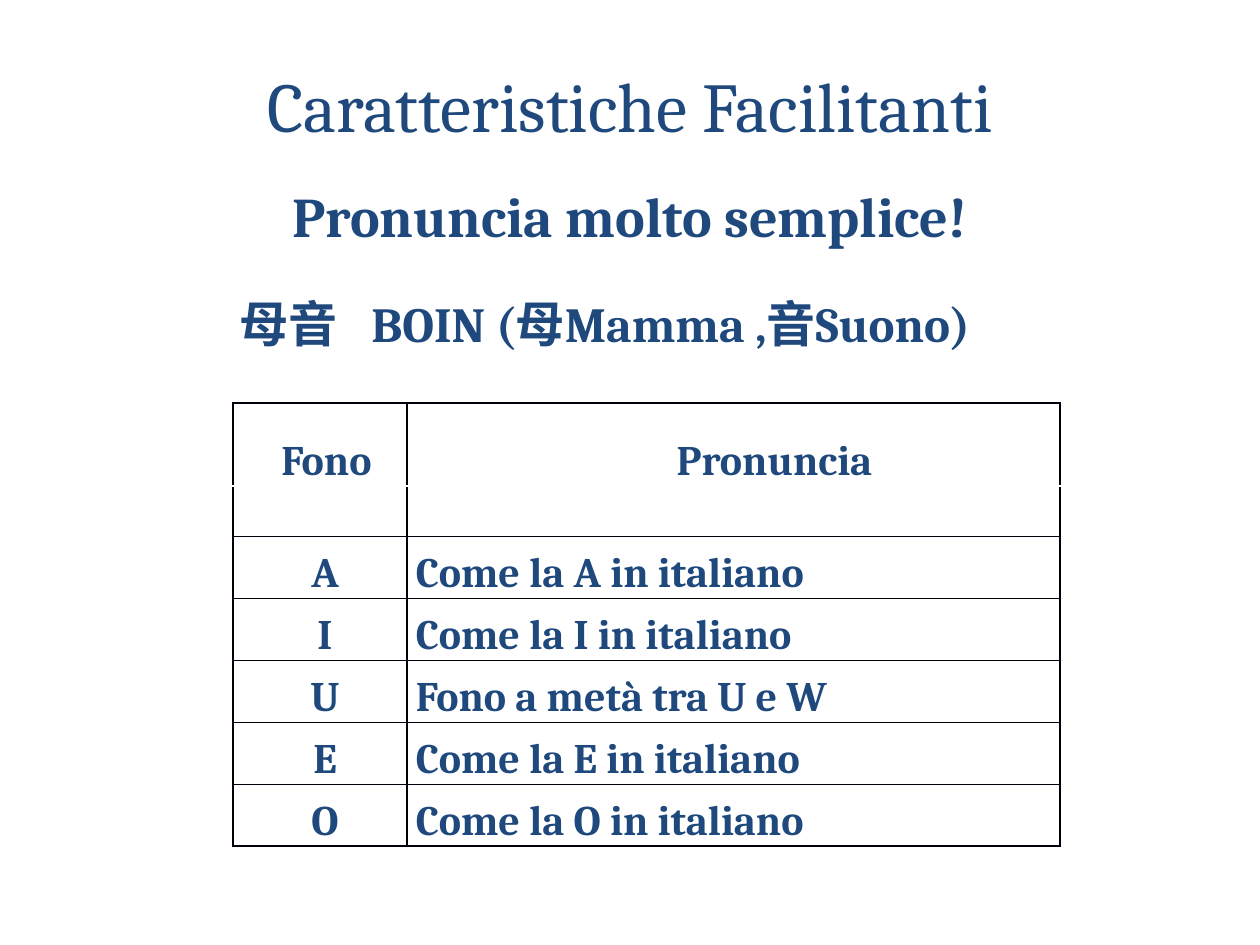
from lxml import etree
from pptx import Presentation
from pptx import util as u
from pptx.dml.color import RGBColor
from pptx.enum import text
from pptx.oxml import ns

PX = 914400 // 126
BLUE, INK = "1F497D", "00000A"
FONT = "Cambria"
LEFT, CENTER = text.PP_ALIGN.LEFT, text.PP_ALIGN.CENTER


def px(length):
    return u.Emu(length * PX)


def color(value):
    return RGBColor.from_string(value)


def add_child(parent, tag, **attributes):
    return etree.SubElement(parent, ns.qn(tag), attributes)


def style(para, size, align=LEFT, bold=True):
    para.alignment = align
    font = para.font
    font.name, font.size, font.bold = FONT, u.Pt(size), bold
    font.color.rgb = color(BLUE)


def add_title(page, box, words):
    title = page.shapes.title
    title.left, title.top, title.width, title.height = map(px, box)
    frame = title.text_frame
    frame.text = words
    frame.auto_size = text.MSO_AUTO_SIZE.NONE
    frame.vertical_anchor = text.MSO_ANCHOR.TOP
    frame.margin_top = px(2)
    style(frame.paragraphs[0], 40, CENTER, False)


def add_line(page, box, words, size, align, tab=None):
    frame = page.shapes.add_textbox(*map(px, box)).text_frame
    frame.word_wrap = True
    para = frame.paragraphs[0]
    para.text = words
    if tab:
        tabs = add_child(para._p.get_or_add_pPr(), "a:tabLst")
        add_child(tabs, "a:tab", pos=str(px(tab)), algn="l")
    style(para, size, align)


def set_borders(cell, sides):
    properties = cell._tc.get_or_add_tcPr()
    for side in sides:
        line = add_child(properties, f"a:ln{side}", w=str(u.Pt(1)))
        fill = add_child(line, "a:solidFill")
        add_child(fill, "a:srgbClr", val=INK)
    cell.fill.background()


def fill_cell(cell, words, align, indent, spacing):
    cell.margin_left = cell.margin_right = cell.margin_top = cell.margin_bottom = 0
    cell.vertical_anchor = text.MSO_ANCHOR.BOTTOM
    para = cell.text_frame.paragraphs[0]
    para.text = words
    para._p.get_or_add_pPr().set("marL", str(px(indent)))
    para.line_spacing = spacing
    para.space_after = u.Pt(10)
    style(para, 24, align)


def add_sounds(page, box, columns, heights, header, sounds):
    table = page.shapes.add_table(len(heights), len(columns), *map(px, box)).table
    table.first_row = table.horz_banding = False
    for column, width in zip(table.columns, columns):
        column.width = px(width)
    for row, height in zip(table.rows, heights):
        row.height = px(height)

    # The header spans two rows with no rule between them
    for index, row in enumerate(table.rows):
        sides = {0: "LRT", 1: "LRB"}.get(index, "LRTB")
        for cell in row.cells:
            set_borders(cell, sides)
    for column, (words, indent) in enumerate(zip(header, (13, 82))):
        fill_cell(table.cell(0, column), words, CENTER, indent, 1.15)

    # One row for each vowel
    for row, (sound, reading) in enumerate(sounds, 2):
        fill_cell(table.cell(row, 0), sound, CENTER, 10, u.Pt(12.4))
        fill_cell(table.cell(row, 1), reading, LEFT, 9, u.Pt(12.4))


def main():
    deck = Presentation()
    deck.slide_width, deck.slide_height = px(1260), px(945)
    page = deck.slides.add_slide(deck.slide_layouts[5])

    # Headings
    add_title(page, (0, 60, 1260, 179), "Caratteristiche Facilitanti")
    add_line(page, (134, 175, 992, 81), "Pronuncia molto semplice!", 32, CENTER)
    add_line(page, (227, 287, 834, 72), "母音\tBOIN (母Mamma ,音Suono)", 28, LEFT, tab=132)

    # Vowel table
    sounds = [(vowel, f"Come la {vowel} in italiano") for vowel in "AIEO"]
    sounds.insert(2, ("U", "Fono a metà tra U e W"))
    add_sounds(page, (233, 403, 827, 443), (174, 653), [83, 50] + [62] * 5,
               ("Fono", "Pronuncia"), sounds)

    deck.save("out.pptx")


if __name__ == "__main__":
    main()
